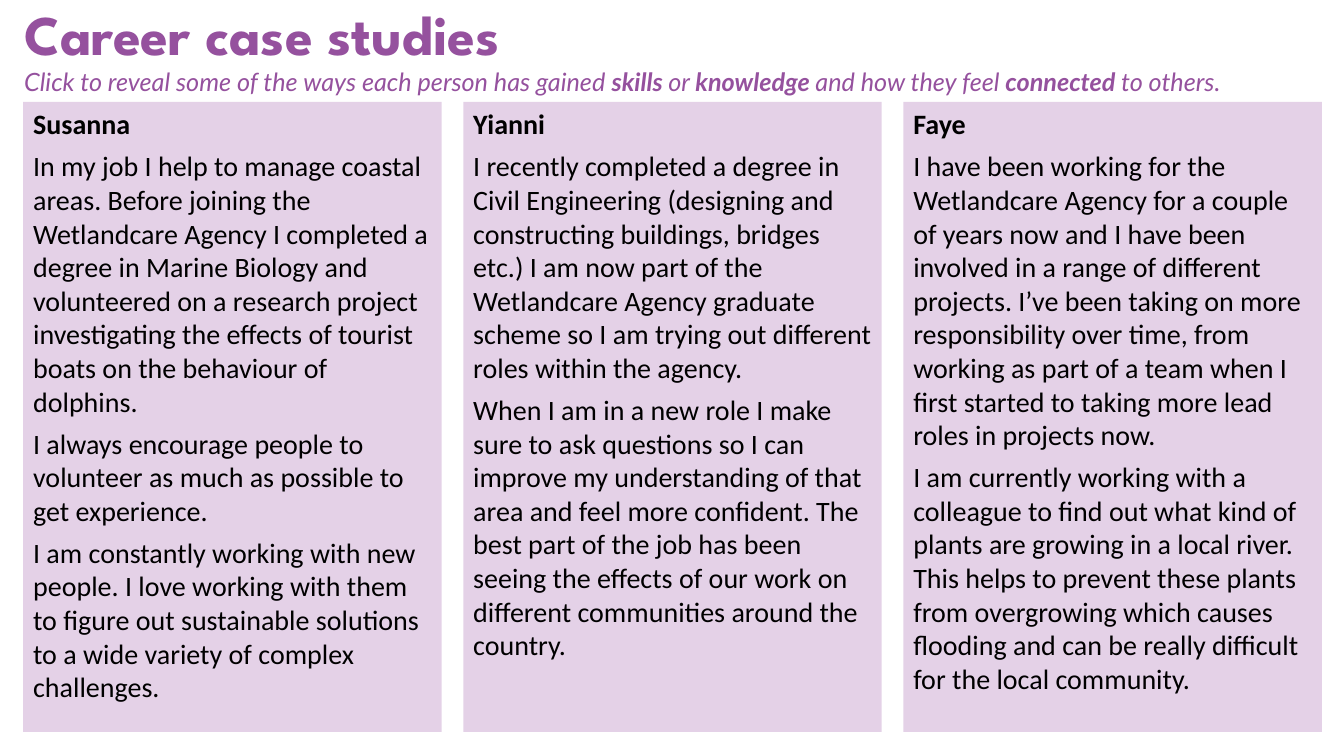
from pptx import Presentation, util as u
from pptx.dml.color import RGBColor
from pptx.enum import shapes, text

TITLE = "Career case studies"
INTRO = [
    ("Click to reveal some of the ways each person has gained ", False),
    ("skills ", True),
    ("or ", False),
    ("knowledge ", True),
    ("and how they feel ", False),
    ("connected ", True),
    ("to others.", False),
]
CASES = [
    ("Susanna", [
        "In my job I help to manage coastal areas. Before joining the Wetlandcare Agency I completed a degree in Marine Biology and volunteered on a research project investigating the effects of tourist boats on the behaviour of dolphins.",
        "I always encourage people to volunteer as much as possible to get experience.",
        "I am constantly working with new people. I love working with them to figure out sustainable solutions to a wide variety of complex challenges.",
    ]),
    ("Yianni", [
        "I recently completed a degree in Civil Engineering (designing and constructing buildings, bridges etc.) I am now part of the Wetlandcare Agency graduate scheme so I am trying out different roles within the agency.",
        "When I am in a new role I make sure to ask questions so I can improve my understanding of that area and feel more confident. The best part of the job has been seeing the effects of our work on different communities around the country.",
    ]),
    ("Faye", [
        "I have been working for the Wetlandcare Agency for a couple of years now and I have been involved in a range of different projects. I’ve been taking on more responsibility over time, from working as part of a team when I first started to taking more lead roles in projects now.",
        "I am currently working with a colleague to find out what kind of plants are growing in a local river. This helps to prevent these plants from overgrowing which causes flooding and can be really difficult for the local community.",
    ]),
]
THEME = {
    "title": ("League Spartan", 40, "95519E"),
    "intro": ("Lato", 18, "95519E"),
    "body": ("Calibri", 20, "000000"),
    "panel": "E4D1E7",
}
LEFT, TOP, WIDE, HIGH, STEP = 0.23, 1.01, 4.15, 6.25, 4.365


def style(run, role, bold, slant=False):
    face, size, tint = THEME[role]
    font = run.font
    font.name, font.size = face, u.Pt(size)
    font.bold, font.italic = bold, slant
    font.color.rgb = RGBColor.from_string(tint)


def header(slide):
    box = slide.shapes.add_textbox(u.Inches(0.14), 0, u.Inches(13.19), u.Inches(1.02))
    frame = box.text_frame
    frame.word_wrap = True
    frame.auto_size = text.MSO_AUTO_SIZE.SHAPE_TO_FIT_TEXT
    head = frame.paragraphs[0]
    head.text = TITLE
    head.line_spacing = u.Pt(44)
    style(head.runs[0], "title", True)
    line = frame.add_paragraph()
    for words, bold in INTRO:
        run = line.add_run()
        run.text = words
        style(run, "intro", bold, True)


def panel(slide, col, name, story):
    box = slide.shapes.add_shape(
        shapes.MSO_SHAPE.RECTANGLE, u.Inches(LEFT + col * STEP),
        u.Inches(TOP), u.Inches(WIDE), u.Inches(HIGH))
    box.shadow.inherit = False
    box.fill.solid()
    box.fill.fore_color.rgb = RGBColor.from_string(THEME["panel"])
    box.line.fill.background()
    frame = box.text_frame
    frame.word_wrap = True
    frame.vertical_anchor = text.MSO_ANCHOR.TOP
    frame.text = "\n".join([name, *story])
    for row, para in enumerate(frame.paragraphs):
        para.alignment = text.PP_ALIGN.LEFT
        para.space_before = u.Pt(6)
        style(para.runs[0], "body", row == 0)


def main():
    deck = Presentation()
    deck.slide_width, deck.slide_height = u.Inches(13.33), u.Inches(7.5)
    slide = deck.slides.add_slide(deck.slide_layouts[6])
    header(slide)
    for col, (name, story) in enumerate(CASES):
        panel(slide, col, name, story)
    deck.save("out.pptx")


if __name__ == "__main__":
    main()
